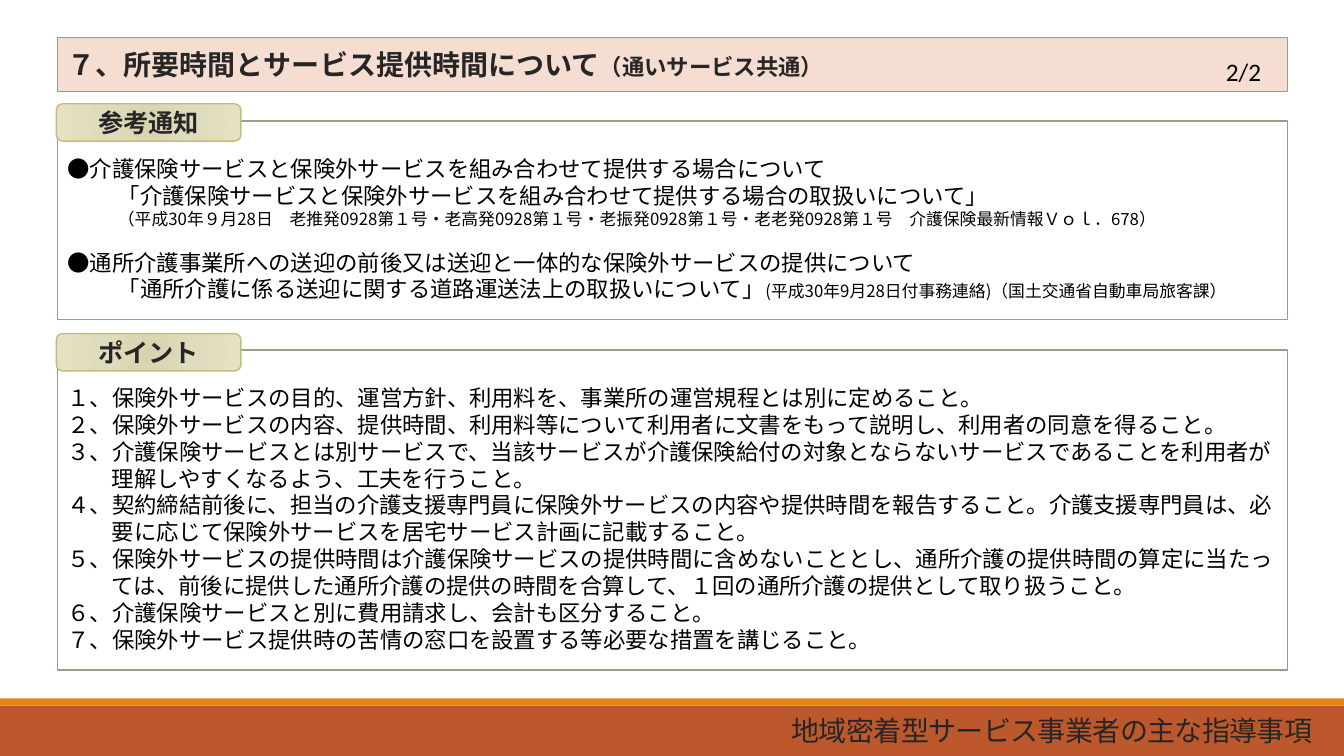
import pptx
import pptx.util
import pptx.oxml
import pptx.oxml.ns
import pptx.dml.color
import pptx.enum.shapes
import pptx.enum.text
from lxml import etree

Inches, Pt = pptx.util.Inches, pptx.util.Pt
ALIGN, ANCHOR = pptx.enum.text.PP_ALIGN, pptx.enum.text.MSO_ANCHOR
SHAPE = pptx.enum.shapes.MSO_SHAPE
FONT = "Noto Sans CJK JP"
DARK, BLACK, GREEN = "262626", "000000", "94A088"
LEFT, WIDTH = 0.57, 12.2

# Each line: indent level, space before in points, spans of (text, size)
NOTICES = [
    (0, 0, [("●介護保険サービスと保険外サービスを組み合わせて提供する場合について", 16)]),
    (1, 0, [("「介護保険サービスと保険外サービスを組み合わせて提供する場合の取扱いについて」", 16)]),
    (1, 0, [("（平成30年９月28日　老推発0928第１号・老高発0928第１号・老振発0928第１号・"
             "老老発0928第１号　介護保険最新情報Ｖｏｌ．678）", 12)]),
    (0, 14, [("●通所介護事業所への送迎の前後又は送迎と一体的な保険外サービスの提供について", 16)]),
    (1, 0, [("「通所介護に係る送迎に関する道路運送法上の取扱いについて」", 16),
            ("(平成30年9月28日付事務連絡)（国土交通省自動車局旅客課）", 12)]),
]
POINTS = [
    "１、保険外サービスの目的、運営方針、利用料を、事業所の運営規程とは別に定めること。",
    "２、保険外サービスの内容、提供時間、利用料等について利用者に文書をもって説明し、利用者の同意を得ること。",
    "３、介護保険サービスとは別サービスで、当該サービスが介護保険給付の対象とならないサービスであることを利用者が"
    "理解しやすくなるよう、工夫を行うこと。",
    "４、契約締結前後に、担当の介護支援専門員に保険外サービスの内容や提供時間を報告すること。介護支援専門員は、必"
    "要に応じて保険外サービスを居宅サービス計画に記載すること。",
    "５、保険外サービスの提供時間は介護保険サービスの提供時間に含めないこととし、通所介護の提供時間の算定に当たっ"
    "ては、前後に提供した通所介護の提供の時間を合算して、１回の通所介護の提供として取り扱うこと。",
    "６、介護保険サービスと別に費用請求し、会計も区分すること。",
    "７、保険外サービス提供時の苦情の窓口を設置する等必要な措置を講じること。",
]


def color(value):
    return pptx.dml.color.RGBColor.from_string(value)


def place(shape, left, top, width, height):
    shape.left, shape.top = Inches(left), Inches(top)
    shape.width, shape.height = Inches(width), Inches(height)


def paint(shape, fill, line=None, weight=1):
    shape.fill.solid()
    shape.fill.fore_color.rgb = color(fill)
    outline(shape, line, weight)


def outline(shape, line, weight=1):
    if line:
        shape.line.color.rgb = color(line)
        shape.line.width = Pt(weight)
    else:
        shape.line.fill.background()


def format_span(span, size, ink, bold=False, font=FONT):
    span.font.size, span.font.bold, span.font.name = Pt(size), bold, font
    span.font.color.rgb = color(ink)
    east_asian = etree.Element(pptx.oxml.ns.qn("a:ea"), typeface=font)
    span.font._element.find(pptx.oxml.ns.qn("a:latin")).addnext(east_asian)


def add_spans(para, spans, ink, bold=False):
    for text, size in spans:
        span = para.add_run()
        span.text = text
        format_span(span, size, ink, bold)


def setup_frame(frame, anchor):
    frame.word_wrap = True
    frame.auto_size = pptx.enum.text.MSO_AUTO_SIZE.NONE
    frame.vertical_anchor = anchor


def add_bar(page, top, height, fill):
    bar = page.shapes.add_shape(SHAPE.RECTANGLE, 0, Inches(top), Inches(13.33), Inches(height))
    bar.shadow.inherit = False
    paint(bar, fill)


def fill_title(title):
    place(title, LEFT, 0.37, WIDTH, 0.54)
    paint(title, "F5DDD2", GREEN)
    setup_frame(title.text_frame, ANCHOR.MIDDLE)
    para = title.text_frame.paragraphs[0]
    para.alignment = ALIGN.LEFT
    add_spans(para, [("７、所要時間とサービス提供時間について", 20), ("（通いサービス共通）", 16)], DARK, True)


def fill_panel(panel, top, height, lines, hanging=0):
    place(panel, LEFT, top, WIDTH, height)
    paint(panel, "FFFFFF", GREEN, 1.25)
    frame = panel.text_frame
    setup_frame(frame, ANCHOR.TOP)
    frame.margin_top = Inches(0.34)
    for index, (level, before, spans) in enumerate(lines):
        para = frame.add_paragraph() if index else frame.paragraphs[0]
        para.level = level
        para.alignment = ALIGN.LEFT
        para.line_spacing = Pt(1.2 * spans[0][1])
        para.space_before, para.space_after = Pt(before), Pt(0)
        add_spans(para, spans, BLACK)
        # No bullet, own indents
        settings = para._p.get_or_add_pPr()
        settings.set("marL", str(Inches(0.5 * level + hanging)))
        settings.set("indent", str(Inches(-hanging)))
        etree.SubElement(settings, pptx.oxml.ns.qn("a:buNone"))


def add_tab(page, top, text):
    tab = page.shapes.add_shape(SHAPE.ROUNDED_RECTANGLE, Inches(0.56), Inches(top),
                                Inches(1.83), Inches(0.37))
    tab.shadow.inherit = False
    stops = "".join(f'<a:gs pos="{pos * 1000}"><a:srgbClr val="{value}"/></a:gs>'
                    for pos, value in ((0, "D7D3AF"), (45, "DFDBBD"), (100, "E5E1C1")))
    gradient = pptx.oxml.parse_xml(
        f'<a:gradFill {pptx.oxml.ns.nsdecls("a")}><a:gsLst>{stops}</a:gsLst><a:path path="circle">'
        '<a:fillToRect l="100000" t="100000" r="100000" b="100000"/></a:path></a:gradFill>')
    tab._element.spPr.find(pptx.oxml.ns.qn("a:prstGeom")).addnext(gradient)
    outline(tab, "C2BC80")
    setup_frame(tab.text_frame, ANCHOR.MIDDLE)
    para = tab.text_frame.paragraphs[0]
    para.alignment = ALIGN.CENTER
    add_spans(para, [(text, 18)], DARK, True)


def add_label(page, area, text, size, ink, font, anchor, align):
    box = page.shapes.add_textbox(*map(Inches, area))
    setup_frame(box.text_frame, anchor)
    box.text_frame.text = text
    para = box.text_frame.paragraphs[0]
    para.alignment = align
    format_span(para.runs[0], size, ink, font=font)
    return para


def main():
    deck = pptx.Presentation()
    deck.slide_width, deck.slide_height = Inches(13.33), Inches(7.5)
    page = deck.slides.add_slide(deck.slide_layouts[3])
    title, notices, points = page.placeholders

    # Heading and panels
    fill_title(title)
    fill_panel(notices, 1.2, 1.97, NOTICES)
    fill_panel(points, 3.47, 3.18, [(0, 0, [(text, 16)]) for text in POINTS], 0.44)
    add_tab(page, 1.03, "参考通知")
    add_tab(page, 3.31, "ポイント")
    add_label(page, (12.06, 0.51, 0.71, 0.4), "2/2", 18, BLACK, "Calibri", ANCHOR.TOP, ALIGN.LEFT)

    # Footer band
    add_bar(page, 7, 0.5, "BD582C")
    add_bar(page, 6.93, 0.07, "E48312")
    footer = add_label(page, (0.57, 7.04, 12.54, 0.46), "地域密着型サービス事業者の主な指導事項",
                       20, DARK, FONT, ANCHOR.MIDDLE, ALIGN.RIGHT)
    footer.line_spacing = 0.85
    footer.runs[0].font._element.set("spc", "-50")

    deck.save("out.pptx")


if __name__ == "__main__":
    main()
